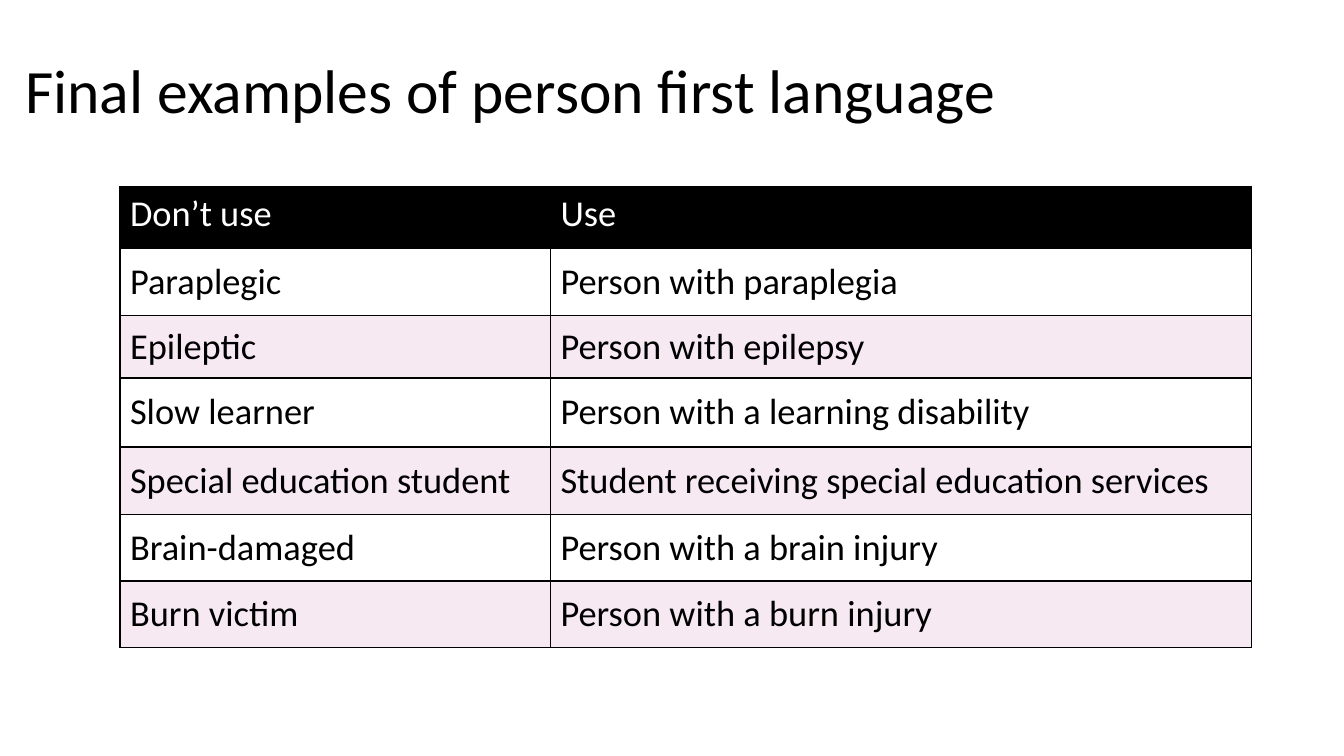
from lxml.etree import SubElement
from pptx import Presentation
from pptx.dml.color import RGBColor
from pptx.enum.text import MSO_ANCHOR
from pptx.oxml.ns import qn
from pptx.util import Pt

BLACK, WHITE, PINK = "000000", "FFFFFF", "F7E9F2"
ROWS = [
    ("Don’t use", "Use"),
    ("Paraplegic", "Person with paraplegia"),
    ("Epileptic", "Person with epilepsy"),
    ("Slow learner", "Person with a learning disability"),
    ("Special education student", "Student receiving special education services"),
    ("Brain-damaged", "Person with a brain injury"),
    ("Burn victim", "Person with a burn injury"),
]
WIDTHS = [307.5, 501]
HEIGHTS = [44.5, 47.8, 44.5, 49.3, 48.5, 47.3, 47.3]


def paint(hue):
    return RGBColor.from_string(hue)


def write(frame, text, size=26, hue=BLACK, face="Calibri", anchor=MSO_ANCHOR.MIDDLE, lead=None):
    frame.text = text
    frame.vertical_anchor = anchor
    para = frame.paragraphs[0]
    para.line_spacing = lead
    font = para.runs[0].font
    font.size, font.name = Pt(size), face
    font.color.rgb = paint(hue)


class Deck:
    line = BLACK
    weight = 1

    def __init__(self):
        self.file = Presentation()
        self.file.slide_width, self.file.slide_height = Pt(960), Pt(540)
        self.slide = self.file.slides.add_slide(self.file.slide_layouts[5])

    def title(self, text, left, top, width, height):
        box = self.slide.shapes.title
        box.left, box.top, box.width, box.height = map(Pt, (left, top, width, height))
        write(box.text_frame, text, size=44, lead=0.9)
        box.text_frame.word_wrap = True
        box.text_frame.paragraphs[0].alignment = 1

    def edge(self, cell):
        props = cell._tc.get_or_add_tcPr()
        for side in ("lnL", "lnR", "lnT", "lnB"):
            rule = SubElement(props, qn(f"a:{side}"), w=str(Pt(self.weight)))
            fill = SubElement(rule, qn("a:solidFill"))
            SubElement(fill, qn("a:srgbClr"), val=self.line)

    def table(self, rows, left, top, widths, heights):
        size = map(Pt, (left, top, sum(widths), sum(heights)))
        grid = self.slide.shapes.add_table(len(rows), len(widths), *size).table
        grid.horz_banding = grid.first_row = False
        for col, width in zip(grid.columns, widths):
            col.width = Pt(width)
        for i, (row, height) in enumerate(zip(rows, heights)):
            grid.rows[i].height = Pt(height)
            for j, text in enumerate(row):
                self.cell(grid.cell(i, j), text, i)

    def cell(self, cell, text, row):
        head = row == 0
        write(cell.text_frame, text, hue=WHITE if head else BLACK)
        cell.vertical_anchor = MSO_ANCHOR.TOP if head else MSO_ANCHOR.MIDDLE
        self.edge(cell)
        if row % 2:
            cell.fill.background()
        else:
            cell.fill.solid()
            cell.fill.fore_color.rgb = paint(BLACK if head else PINK)


def main():
    deck = Deck()
    deck.title("Final examples of person first language", 10.8, 0, 883.5, 133.2)
    deck.table(ROWS, 85.7, 133.2, WIDTHS, HEIGHTS)
    deck.file.save("out.pptx")


if __name__ == "__main__":
    main()
